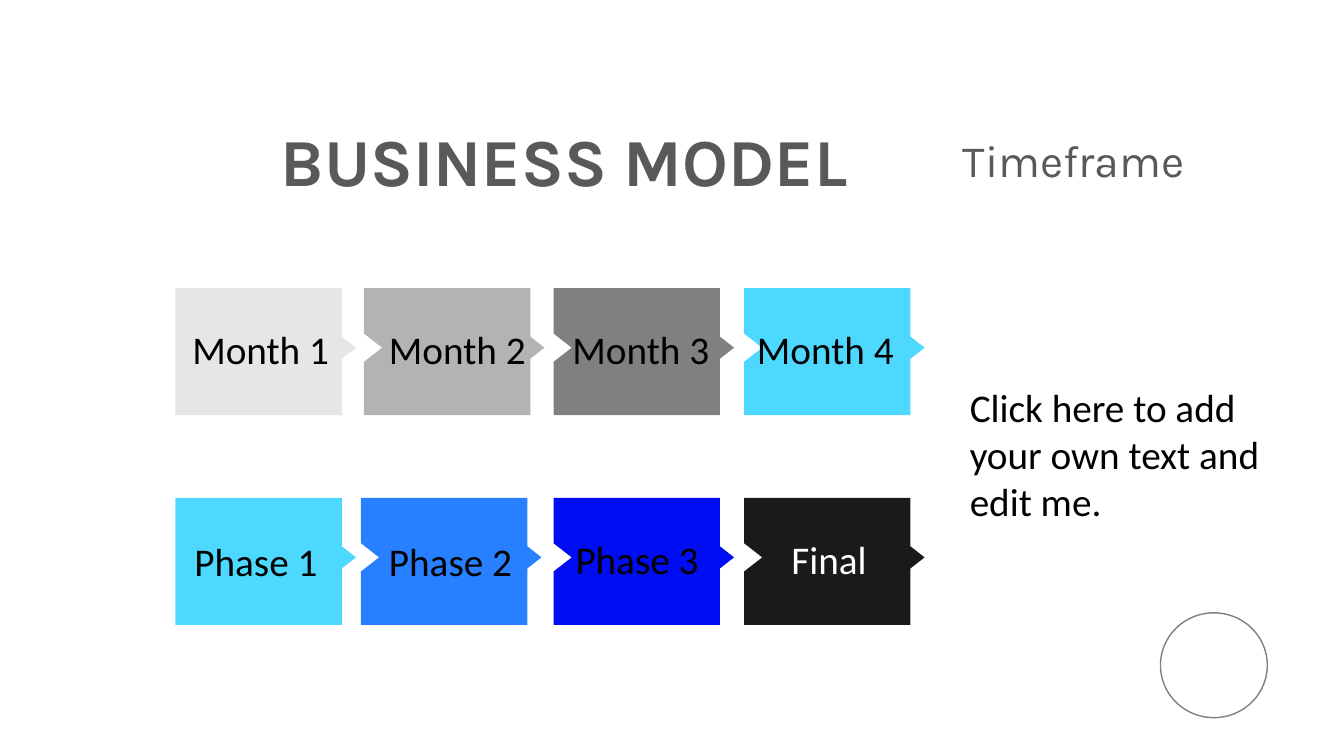
from pptx import Presentation
from pptx.dml.color import RGBColor
from pptx.enum.shapes import MSO_SHAPE
from pptx.enum.text import MSO_AUTO_SIZE as AutoSize, PP_ALIGN as Align
from pptx.util import Inches, Pt

BLACK = RGBColor(0x00, 0x00, 0x00)
WHITE = RGBColor(0xFF, 0xFF, 0xFF)
HEADING = RGBColor(0x59, 0x59, 0x59)
PALE_GREY = RGBColor(0xE6, 0xE6, 0xE6)
LIGHT_GREY = RGBColor(0xB3, 0xB3, 0xB3)
MID_GREY = RGBColor(0x80, 0x80, 0x80)
SKY = RGBColor(0x4D, 0xD9, 0xFF)
AZURE = RGBColor(0x26, 0x80, 0xFF)
ULTRAMARINE = RGBColor(0x00, 0x0D, 0xF2)
NEAR_BLACK = RGBColor(0x1A, 0x1A, 0x1A)

# Step block measures, in inches
BODY_WIDTH, BODY_HEIGHT = 1.65, 1.26
TIP_DEPTH, TIP_HALF = 0.14, 0.11
NOTCH_DEPTH, NOTCH_HALF = 0.18, 0.14
MIDDLE = 0.59

# Row top, then per step: left, fill, label, label left, label top, label colour
ROWS = [
    (2.86, [
        (1.74, PALE_GREY, "Month 1", 1.81, 3.18, BLACK),
        (3.61, LIGHT_GREY, "Month 2", 3.76, 3.18, BLACK),
        (5.49, MID_GREY, "Month 3", 5.58, 3.18, BLACK),
        (7.38, SKY, "Month 4", 7.41, 3.18, BLACK),
    ]),
    (4.94, [
        (1.74, SKY, "Phase 1", 1.83, 5.28, BLACK),
        (3.58, AZURE, "Phase 2", 3.76, 5.28, BLACK),
        (5.49, ULTRAMARINE, "Phase 3", 5.61, 5.26, BLACK),
        (7.38, NEAR_BLACK, "Final", 7.75, 5.26, WHITE),
    ]),
]


def add_text(slide, text, left, top, width, height, size=28, font="Calibri",
             color=BLACK, bold=False, align=Align.LEFT):
    box = slide.shapes.add_textbox(
        Inches(left), Inches(top), Inches(width), Inches(height))
    frame = box.text_frame
    frame.word_wrap = True
    frame.auto_size = AutoSize.SHAPE_TO_FIT_TEXT
    paragraph = frame.paragraphs[0]
    paragraph.alignment = align
    run = paragraph.add_run()
    run.text = text
    run.font.size = Pt(size)
    run.font.name = font
    run.font.bold = bold
    run.font.color.rgb = color


def add_step(slide, left, top, color, notched):
    """Draw a block with a pointed tab on the right and an optional left notch."""
    right, bottom, middle = left + BODY_WIDTH, top + BODY_HEIGHT, top + MIDDLE
    outline = [
        (right, top),
        (right, middle - TIP_HALF),
        (right + TIP_DEPTH, middle),
        (right, middle + TIP_HALF),
        (right, bottom),
        (left, bottom),
    ]
    if notched:
        outline += [
            (left, middle + NOTCH_HALF),
            (left + NOTCH_DEPTH, middle),
            (left, middle - NOTCH_HALF),
        ]
    builder = slide.shapes.build_freeform(Inches(left), Inches(top))
    builder.add_line_segments([(Inches(x), Inches(y)) for x, y in outline])
    step = builder.convert_to_shape()
    step.shadow.inherit = False
    step.fill.solid()
    step.fill.fore_color.rgb = color
    step.line.fill.background()


def add_ring(slide, left, top, width, height):
    ring = slide.shapes.add_shape(
        MSO_SHAPE.OVAL, Inches(left), Inches(top), Inches(width), Inches(height))
    ring.shadow.inherit = False
    ring.fill.background()
    ring.line.color.rgb = MID_GREY
    ring.line.width = Pt(1)


def main():
    prs = Presentation()
    prs.slide_width, prs.slide_height = Inches(13.33), Inches(7.5)
    slide = prs.slides.add_slide(prs.slide_layouts[6])

    # Corner ring and headings
    add_ring(slide, 11.51, 6.08, 1.06, 1.04)
    add_text(slide, "BUSINESS MODEL", 2.15, 1.13, 6.89, 0.91, size=48,
             font="Karla", color=HEADING, bold=True, align=Align.CENTER)
    add_text(slide, "Timeframe", 9.33, 1.27, 2.52, 0.64, size=32,
             font="Karla", color=HEADING, align=Align.RIGHT)

    # Month and phase rows
    for row_top, steps in ROWS:
        for index, (left, fill, label, label_left, label_top, ink) in enumerate(steps):
            add_step(slide, left, row_top, fill, notched=index > 0)
            add_text(slide, label, label_left, label_top, 1.6, 0.57, color=ink)

    # Side note
    add_text(slide, "Click here to add your own text and edit me.",
             9.52, 3.75, 3.46, 1.51)

    prs.save("out.pptx")


if __name__ == "__main__":
    main()
